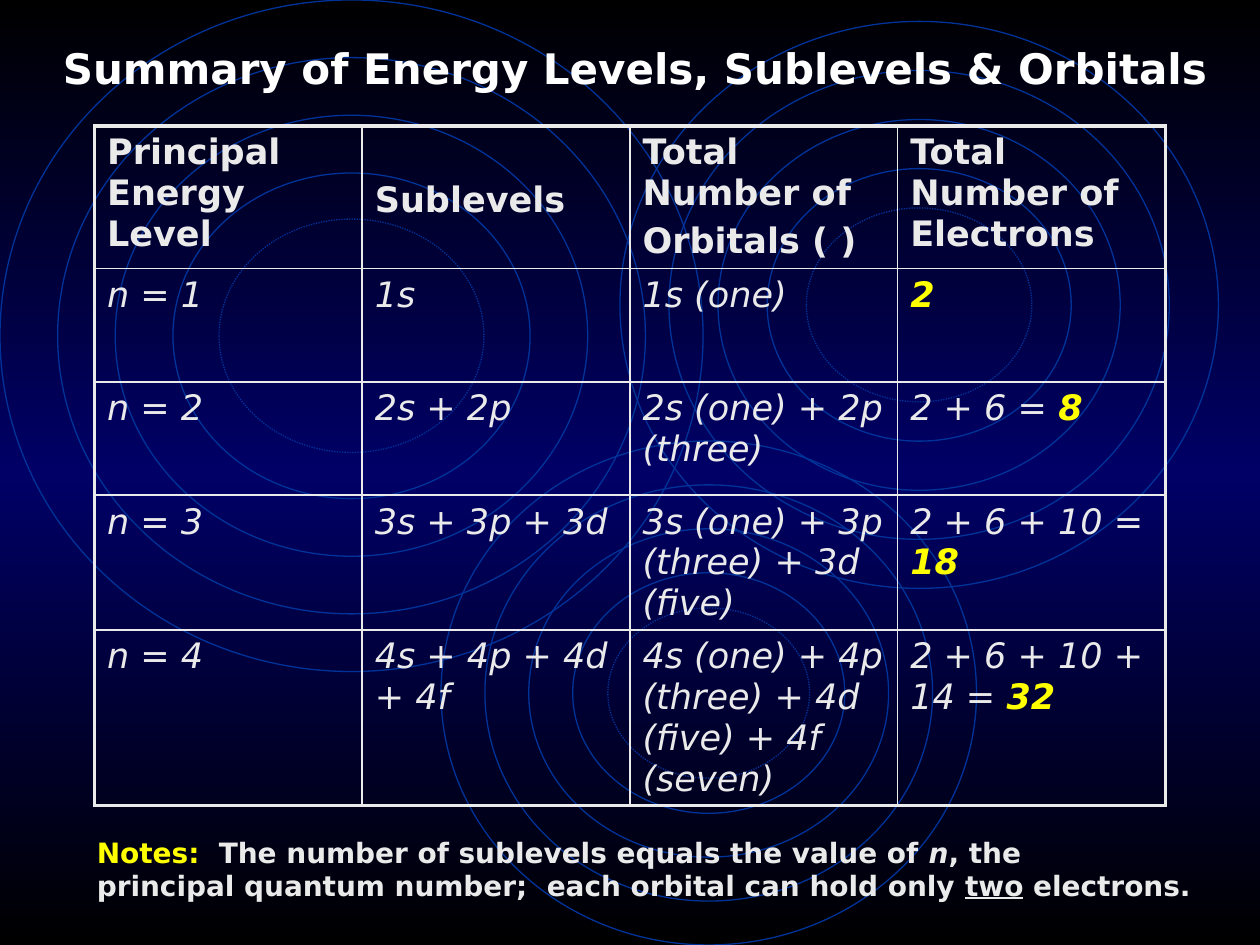
from copy import deepcopy

from lxml import etree
from pptx import Presentation
from pptx.dml.color import RGBColor
from pptx.enum.dml import MSO_LINE
from pptx.enum.shapes import MSO_SHAPE
from pptx.enum.text import MSO_ANCHOR, PP_ALIGN
from pptx.oxml.ns import qn
from pptx.util import Inches, Pt

ELLIPSE = MSO_SHAPE.OVAL
DOTTED = MSO_LINE.ROUND_DOT
MIDDLE = MSO_ANCHOR.MIDDLE
CENTER = PP_ALIGN.CENTER

FONT = "DejaVu Sans"
WHITE, LIGHT, YELLOW = "FFFFFF", "EAEAEA", "FFFF00"
RING_BLUE, BLACK, NAVY = "003399", "000000", "000066"


def add_text(paragraph, text, size=20, color=LIGHT, bold=False, italic=False, underline=False):
    run = paragraph.add_run()
    run.text = text
    run.font.name = FONT
    run.font.size = Pt(size)
    run.font.color.rgb = RGBColor.from_string(color)
    run.font.bold = bold
    run.font.italic = italic
    run.font.underline = underline


def add_border(cell, side, width):
    """Draw one side (L, R, T or B) of a cell; call before setting its fill."""
    properties = cell._tc.get_or_add_tcPr()
    line = etree.SubElement(properties, qn(f"a:ln{side}"), w=str(Pt(width)))
    fill = etree.SubElement(line, qn("a:solidFill"))
    etree.SubElement(fill, qn("a:srgbClr"), val=LIGHT)


presentation = Presentation()
presentation.slide_width = Inches(10)
presentation.slide_height = Inches(7.5)
slide = presentation.slides.add_slide(presentation.slide_layouts[5])

# Background: black to navy and back, top to bottom
background = slide.background.fill
background.gradient()
background.gradient_angle = 90
outer_stop, middle_stop = background.gradient_stops
outer_stop.color.rgb = RGBColor.from_string(BLACK)
outer_stop.position = 0
middle_stop.color.rgb = RGBColor.from_string(NAVY)
middle_stop.position = 0.5
stop_list = next(slide.element.iter(qn("a:gsLst")))
last_stop = deepcopy(stop_list[0])
last_stop.set("pos", "100000")
stop_list.append(last_stop)

# Three sets of concentric rings, the innermost one dotted
ring_sets = [(0, 0, 5.58, 5.33), (3.5, 3.5, 4.25, 4), (4.92, 0.17, 4.75, 4.5)]
for left, top, width, height in ring_sets:
    for step in (0, 1, 2, 3, 3.8):
        inset = 0.082 * width * step
        ring = slide.shapes.add_shape(
            ELLIPSE, Inches(left + inset), Inches(top + inset),
            Inches(width - 2 * inset), Inches(height - 2 * inset))
        ring.shadow.inherit = False
        ring.fill.background()
        ring.line.color.rgb = RGBColor.from_string(RING_BLUE)
        ring.line.width = Pt(0.75)
        if step == 3.8:
            ring.line.dash_style = DOTTED

# Title, brought in front of the rings
title = slide.shapes.title
title.left, title.top = Inches(0.33), Inches(0.25)
title.width, title.height = Inches(9.42), Inches(0.58)
title.text_frame.vertical_anchor = MIDDLE
title.text_frame.paragraphs[0].alignment = CENTER
add_text(title.text_frame.paragraphs[0], "Summary of Energy Levels, Sublevels & Orbitals",
         size=24, color=WHITE, bold=True)
title.element.getparent().append(title.element)

# Table: the last column of each level is a sum and its result
headers = ["Principal Energy Level", "Sublevels", "Total Number of\nOrbitals ( )",
           "Total Number of Electrons"]
levels = [
    ["n = 1", "1s", "1s (one)", ("", "2")],
    ["n = 2", "2s + 2p", "2s (one) + 2p (three)", ("2 + 6 = ", "8")],
    ["n = 3", "3s + 3p + 3d", "3s (one) + 3p (three) + 3d (five)", ("2 + 6 + 10 = ", "18")],
    ["n = 4", "4s + 4p + 4d + 4f", "4s (one) + 4p (three) + 4d (five) + 4f (seven)",
     ("2 + 6 + 10 + 14 = ", "32")],
]
rows = [headers] + levels
row_heights = [1.13, 0.9, 0.9, 1.07, 1.39]
last_row, last_column = len(rows) - 1, len(headers) - 1

table = slide.shapes.add_table(len(rows), len(headers), Inches(0.75), Inches(1),
                               Inches(8.5), Inches(sum(row_heights))).table
table.first_row = False
table.horz_banding = False
for row, height in zip(table.rows, row_heights):
    row.height = Inches(height)

for row_index, values in enumerate(rows):
    for column_index, value in enumerate(values):
        cell = table.cell(row_index, column_index)
        outer_sides = {"L": column_index == 0, "R": column_index == last_column,
                       "T": row_index == 0, "B": row_index == last_row}
        for side, is_outer in outer_sides.items():
            add_border(cell, side, 2.25 if is_outer else 1)
        cell.fill.background()

        frame = cell.text_frame
        if isinstance(value, tuple):
            sum_text, result = value
            if sum_text:
                add_text(frame.paragraphs[0], sum_text, italic=True)
            add_text(frame.paragraphs[0], result, color=YELLOW, bold=True, italic=True)
        else:
            is_header = row_index == 0
            for line_index, line in enumerate(value.split("\n")):
                paragraph = frame.add_paragraph() if line_index else frame.paragraphs[0]
                paragraph.space_before = Pt(4)
                add_text(paragraph, line, bold=is_header, italic=not is_header)

sublevels_header = table.cell(0, 1)
sublevels_header.vertical_anchor = MIDDLE
sublevels_header.margin_top = Inches(0.1)

# Notes under the table
notes = slide.shapes.add_textbox(Inches(0.67), Inches(6.58), Inches(9.08), Inches(0.64))
notes.text_frame.word_wrap = True
first_line = notes.text_frame.paragraphs[0]
second_line = notes.text_frame.add_paragraph()
for paragraph, text, text_format in [
    (first_line, "Notes:", {"color": YELLOW}),
    (first_line, "  The number of sublevels equals the value of ", {}),
    (first_line, "n", {"italic": True}),
    (first_line, ", the", {}),
    (second_line, "principal quantum number;  each orbital can hold only ", {}),
    (second_line, "two", {"underline": True}),
    (second_line, " electrons.", {}),
]:
    add_text(paragraph, text, size=16, bold=True, **text_format)

presentation.save("out.pptx")
